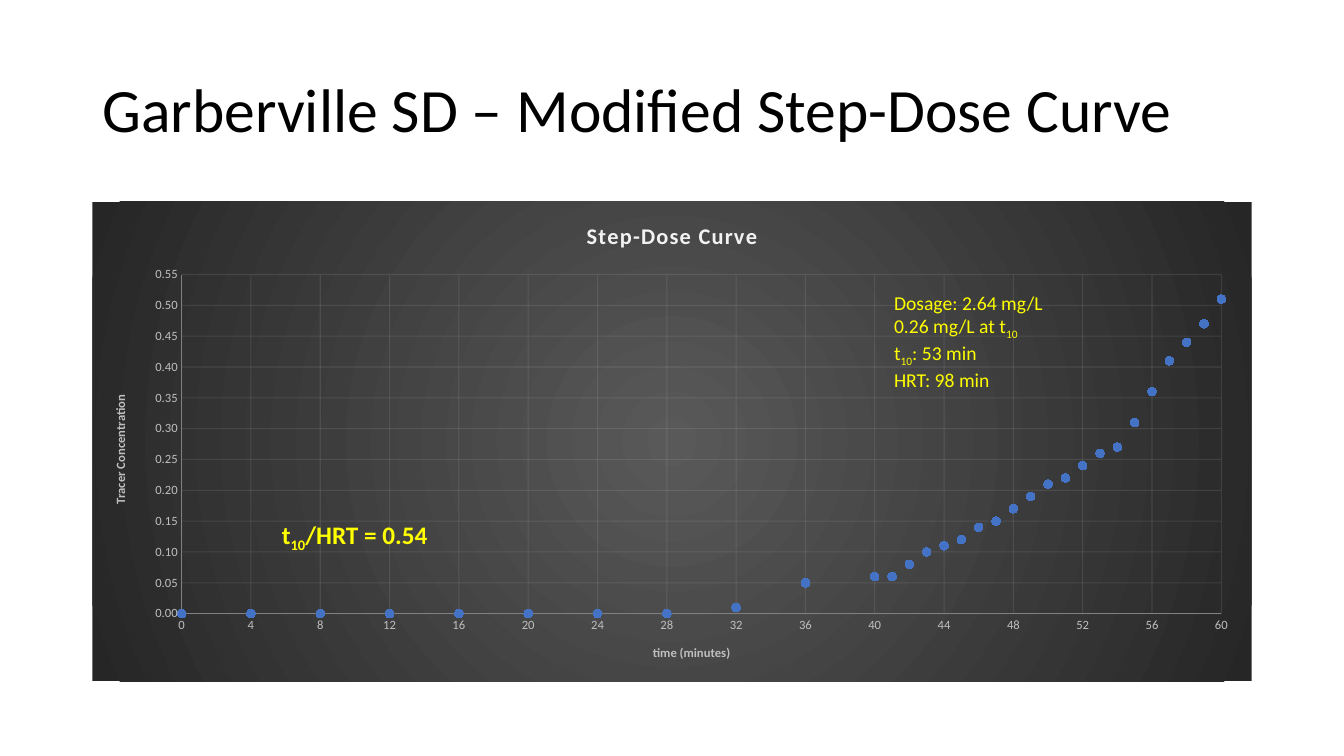
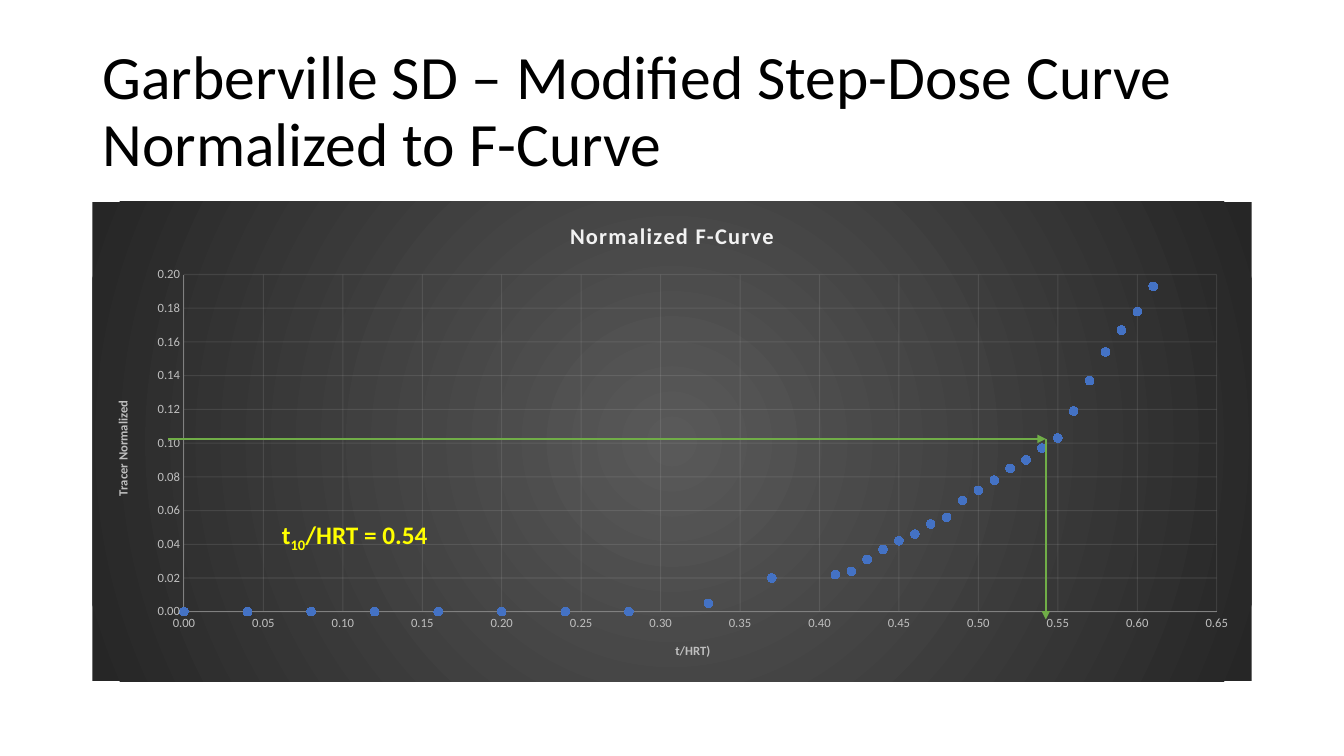
from lxml import etree
from pptx import Presentation
from pptx.chart.data import XyChartData
from pptx.dml.color import RGBColor
from pptx.enum.chart import XL_CHART_TYPE, XL_MARKER_STYLE, XL_TICK_LABEL_POSITION, XL_TICK_MARK
from pptx.enum.shapes import MSO_CONNECTOR
from pptx.enum.text import MSO_ANCHOR, MSO_AUTO_SIZE, PP_ALIGN
from pptx.oxml import parse_xml
from pptx.oxml.ns import nsdecls, qn
from pptx.util import Pt

PX = 9525
FONT = "Calibri"
BLACK = RGBColor(0x00, 0x00, 0x00)
YELLOW = RGBColor(0xFF, 0xFF, 0x00)
GREEN = RGBColor(0x70, 0xAD, 0x47)
BLUE = RGBColor(0x44, 0x72, 0xC4)
PALE = RGBColor(0xF2, 0xF2, 0xF2)
SILVER = RGBColor(0xBF, 0xBF, 0xBF)
GRAY = RGBColor(0x80, 0x80, 0x80)
GLOW = RGBColor(0x59, 0x59, 0x59)
DARK = RGBColor(0x26, 0x26, 0x26)

TITLE_BOX = [v * PX for v in (88, 38, 1104, 139)]
CHART_BOX = [v * PX for v in (88, 192, 1104, 457)]
RATIO_BOX = [v * PX for v in (259, 490, 162, 38)]
DOSAGE_BOX = [v * PX for v in (842, 272, 177, 100)]

BACKDROP = f"""<c:spPr {nsdecls("c", "a")}><a:gradFill><a:gsLst>
<a:gs pos="0"><a:srgbClr val="{GLOW}"/></a:gs>
<a:gs pos="100000"><a:srgbClr val="{DARK}"/></a:gs></a:gsLst>
<a:path path="circle"><a:fillToRect l="50000" t="50000" r="50000" b="50000"/></a:path>
</a:gradFill><a:ln><a:noFill/></a:ln></c:spPr>"""

MINUTES = [*range(0, 40, 4), *range(40, 61)]
HRT = 98.3

# Axes are (title, number format, maximum, major unit); plot is x, y, w, h as shares of the chart
SLIDES = [
    dict(
        title="Garberville SD – Modified Step-Dose Curve",
        chart_title="Step-Dose Curve",
        x_axis=("time (minutes)", "#,##0", 60, 4),
        y_axis=("Tracer Concentration", "0.00", 0.55, 0.05),
        plot=(0.077, 0.152, 0.897, 0.707),
        xs=MINUTES,
        ys=[0, 0, 0, 0, 0, 0, 0, 0, 0.01, 0.05, 0.06, 0.06, 0.08, 0.1, 0.11, 0.12,
            0.14, 0.15, 0.17, 0.19, 0.21, 0.22, 0.24, 0.26, 0.27, 0.31, 0.36, 0.41,
            0.44, 0.47, 0.51],
        notes=["Dosage: 2.64 mg/L", "0.26 mg/L at t_10_", "t_10_: 53 min", "HRT: 98 min"],
        arrows=[],
    ),
    dict(
        title="Garberville SD – Modified Step-Dose Curve Normalized to F-Curve",
        chart_title="Normalized F-Curve",
        x_axis=("t/HRT)", "#,##0.00", 0.65, 0.05),
        y_axis=("Tracer Normalized", "0.00", 0.2, 0.02),
        plot=(0.079, 0.152, 0.891, 0.703),
        xs=[round(t / HRT, 2) for t in MINUTES],
        ys=[0, 0, 0, 0, 0, 0, 0, 0, 0.005, 0.02, 0.022, 0.024, 0.031, 0.037, 0.042,
            0.046, 0.052, 0.056, 0.066, 0.072, 0.078, 0.085, 0.09, 0.097, 0.103,
            0.119, 0.137, 0.154, 0.167, 0.178, 0.193],
        notes=[],
        arrows=[(160, 418, 996, 418), (996, 418, 996, 590)],
    ),
]


def write(tf, *lines, size, color, bold=False, spacing=None, tracking=None):
    """Write one paragraph per line; text between underscores is subscript."""
    for i, line in enumerate(lines):
        p = tf.paragraphs[0] if i == 0 else tf.add_paragraph()
        p.alignment = PP_ALIGN.LEFT
        if spacing:
            p.line_spacing = spacing
        for j, part in enumerate(line.split("_")):
            if not part:
                continue
            r = p.add_run()
            r.text = part
            r.font.name, r.font.size, r.font.bold = FONT, Pt(size), bold
            r.font.color.rgb = color
            if j % 2:
                r.font._element.set("baseline", "-25000")
            if tracking:
                r.font._element.set("spc", str(tracking))


def style_axis(axis, title, number_format, maximum, major):
    axis.minimum_scale, axis.maximum_scale, axis.major_unit = 0, maximum, major
    axis.major_tick_mark = axis.minor_tick_mark = XL_TICK_MARK.NONE
    axis.tick_label_position = XL_TICK_LABEL_POSITION.NEXT_TO_AXIS
    labels = axis.tick_labels
    labels.number_format, labels.number_format_is_linked = number_format, False
    labels.font.name, labels.font.size = FONT, Pt(9)
    labels.font.color.rgb = SILVER
    axis.has_major_gridlines = True
    for line, color in ((axis.format.line, GRAY), (axis.major_gridlines.format.line, PALE)):
        line.width = Pt(0.75)
        line.color.rgb = color
    grid_color = axis._element.xpath("c:majorGridlines//a:srgbClr")[0]
    etree.SubElement(grid_color, qn("a:alpha")).set("val", "10000")
    write(axis.axis_title.text_frame, title, size=9, color=SILVER, bold=True)


prs = Presentation()
prs.slide_width, prs.slide_height = 1280 * PX, 720 * PX

for content in SLIDES:
    s = prs.slides.add_slide(prs.slide_layouts[5])

    title = s.shapes.title
    title.left, title.top, title.width, title.height = TITLE_BOX
    tf = title.text_frame
    tf.auto_size, tf.vertical_anchor = MSO_AUTO_SIZE.NONE, MSO_ANCHOR.MIDDLE
    write(tf, content["title"], size=44, color=BLACK, spacing=0.9)

    data = XyChartData()
    points = data.add_series("Series 1")
    for x, y in zip(content["xs"], content["ys"]):
        points.add_data_point(x, y)
    chart = s.shapes.add_chart(XL_CHART_TYPE.XY_SCATTER, *CHART_BOX, data).chart
    chart.font.name, chart.font.size = FONT, Pt(10)
    chart.has_legend = False
    chart.has_title = True
    write(chart.chart_title.text_frame, content["chart_title"],
          size=16, color=PALE, bold=True, tracking=100)
    style_axis(chart.category_axis, *content["x_axis"])
    style_axis(chart.value_axis, *content["y_axis"])
    chart.value_axis.axis_title.text_frame._txBody.bodyPr.set("rot", "-5400000")

    chart.plots[0].vary_by_categories = False
    series = chart.plots[0].series[0]
    series.smooth = False
    series.format.line.fill.background()
    marker = series.marker
    marker.style, marker.size = XL_MARKER_STYLE.CIRCLE, 6
    marker.format.fill.solid()
    marker.format.fill.fore_color.rgb = BLUE
    marker.format.line.fill.background()

    chart_el = chart._chartSpace.find(qn("c:chart"))
    chart_el.addnext(parse_xml(BACKDROP))
    plot_area = chart_el.find(qn("c:plotArea"))
    for old in plot_area.findall(qn("c:layout")):
        plot_area.remove(old)
    layout = etree.Element(qn("c:layout"))
    manual = etree.SubElement(layout, qn("c:manualLayout"))
    settings = [("layoutTarget", "inner"), ("xMode", "edge"), ("yMode", "edge")]
    for tag, value in settings + list(zip("xywh", content["plot"])):
        etree.SubElement(manual, qn(f"c:{tag}")).set("val", str(value))
    plot_area.insert(0, layout)

    for x1, y1, x2, y2 in content["arrows"]:
        arrow = s.shapes.add_connector(
            MSO_CONNECTOR.STRAIGHT, x1 * PX, y1 * PX, x2 * PX, y2 * PX)
        arrow.line.color.rgb = GREEN
        arrow.line.width = Pt(1.5)
        etree.SubElement(arrow.line._get_or_add_ln(), qn("a:tailEnd")).set("type", "triangle")
        etree.SubElement(arrow._element.spPr, qn("a:effectLst"))

    if content["notes"]:
        tf = s.shapes.add_textbox(*DOSAGE_BOX).text_frame
        tf.word_wrap, tf.auto_size = True, MSO_AUTO_SIZE.SHAPE_TO_FIT_TEXT
        write(tf, *content["notes"], size=14, color=YELLOW)

    tf = s.shapes.add_textbox(*RATIO_BOX).text_frame
    tf.word_wrap, tf.auto_size = False, MSO_AUTO_SIZE.SHAPE_TO_FIT_TEXT
    write(tf, "t_10_/HRT = 0.54", size=18, color=YELLOW, bold=True)

prs.save("out.pptx")
